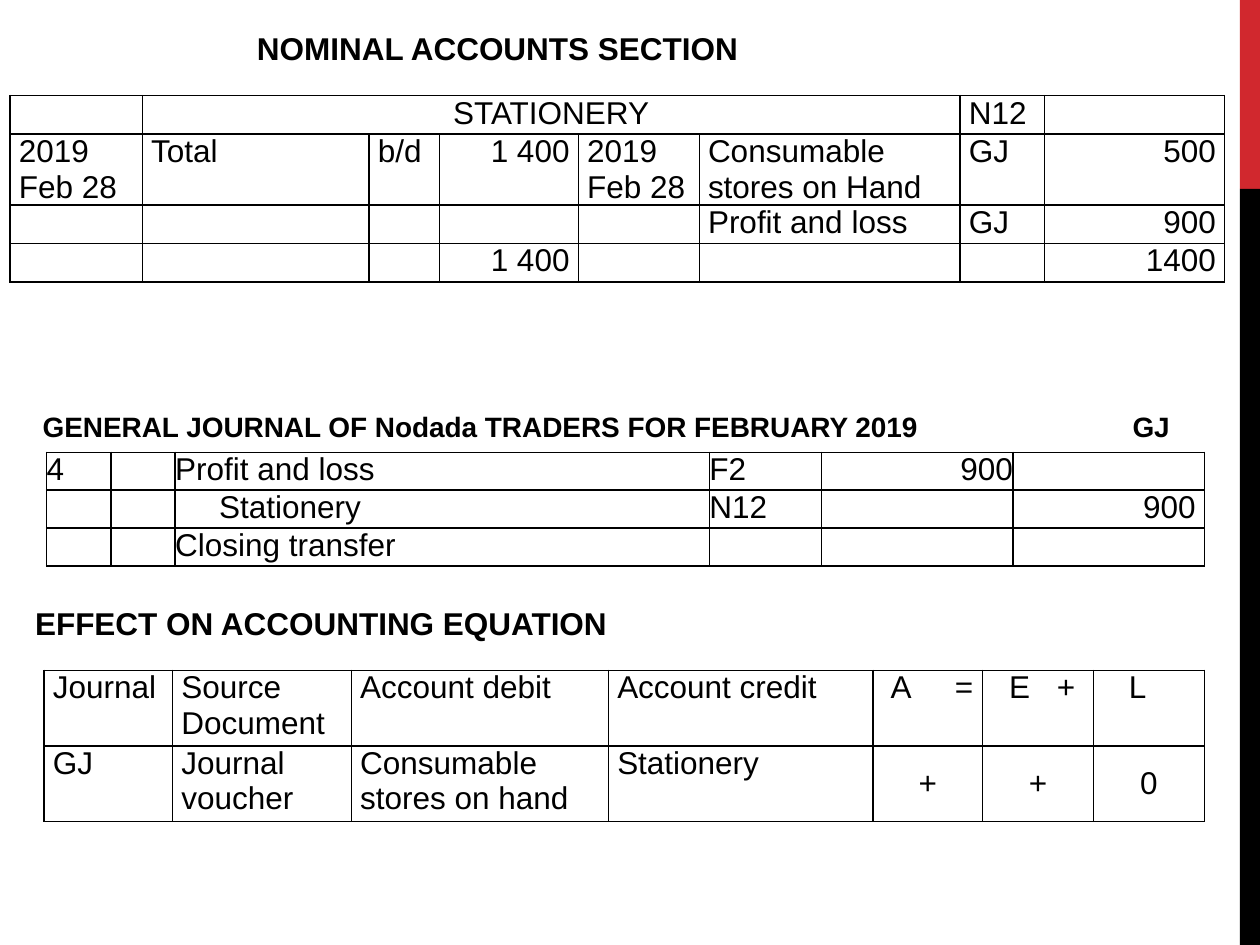
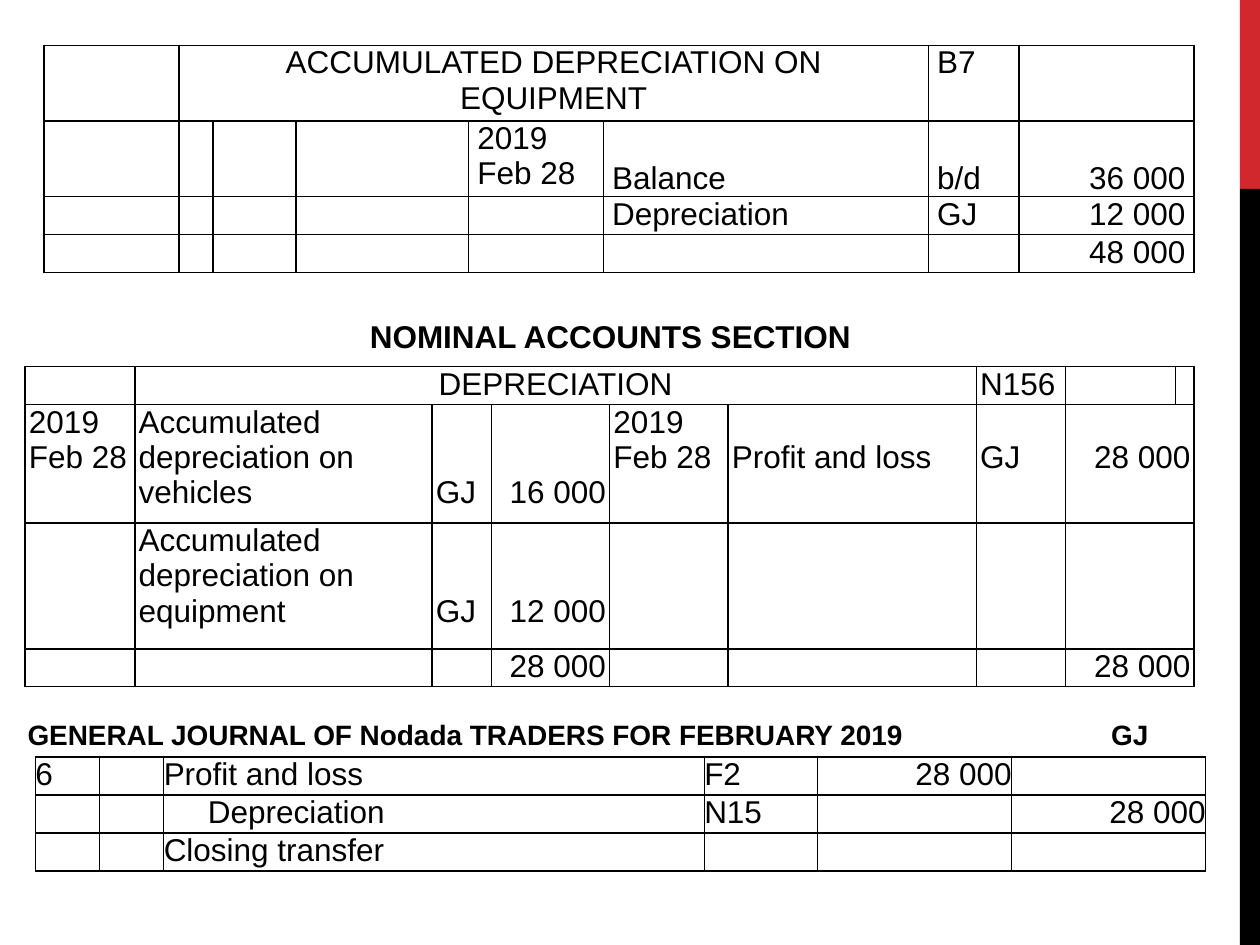
"""Build two slides of ledger accounts, journal entries and the accounting equation."""
from dataclasses import dataclass

from lxml import etree
from pptx import Presentation
from pptx import util as u
from pptx.dml.color import RGBColor
from pptx.enum import shapes, text
from pptx.oxml import ns

COLORS = {"ink": "000000", "accent": "D1282E", "paper": "FFFFFF"}
FONT = "Arial"
LINE = 0.28
ALIGN = {"l": text.PP_ALIGN.LEFT, "c": text.PP_ALIGN.CENTER, "r": text.PP_ALIGN.RIGHT}
ANCHOR = {"t": text.MSO_ANCHOR.TOP, "m": text.MSO_ANCHOR.MIDDLE, "b": text.MSO_ANCHOR.BOTTOM}


@dataclass(frozen=True)
class Bar:
    top: float
    height: float
    color: str


@dataclass(frozen=True)
class Heading:
    text: str
    left: float
    top: float
    width: float
    height: float = 0.4
    size: int = 18
    align: str = "l"
    tab: float | None = None
    right_inset: float = 0.1


@dataclass(frozen=True)
class Cell:
    text: str
    align: str | None = None
    anchor: str = "t"
    left: float | None = None
    right: float | None = None
    top: float = 0
    tab: float | None = None


@dataclass(frozen=True)
class Grid:
    left: float
    top: float
    cols: tuple[float, ...]
    heights: tuple[float, ...]
    rows: list[list[str | Cell]]
    inset: float = 0.07
    right_cols: tuple[int, ...] = ()
    spans: tuple[tuple[int, int, int], ...] = ()


BARS = (Bar(0, 1.5, "accent"), Bar(1.5, 6, "ink"))


def rgb(name: str) -> RGBColor:
    return RGBColor.from_string(COLORS[name])


def put_text(tf, content: str, *, size: int = 18, bold: bool = False,
             align: str = "l", tab: float | None = None) -> None:
    for i, line in enumerate(content.split("\n")):
        p = tf.paragraphs[0] if i == 0 else tf.add_paragraph()
        p.alignment = ALIGN[align]
        if tab is not None:
            tabs = etree.SubElement(p._p.get_or_add_pPr(), ns.qn("a:tabLst"))
            etree.SubElement(tabs, ns.qn("a:tab"), pos=str(u.Inches(tab)), algn="l")
        r = p.add_run()
        r.text = line
        r.font.name = FONT
        r.font.size = u.Pt(size)
        r.font.bold = bold
        r.font.color.rgb = rgb("ink")


def add_bar(s, bar: Bar) -> None:
    sp = s.shapes.add_shape(shapes.MSO_SHAPE.RECTANGLE, u.Inches(9.84), u.Inches(bar.top),
                            u.Inches(0.16), u.Inches(bar.height))
    sp.shadow.inherit = False
    sp.fill.solid()
    sp.fill.fore_color.rgb = rgb(bar.color)
    sp.line.fill.background()


def add_heading(s, h: Heading) -> None:
    sp = s.shapes.add_textbox(u.Inches(h.left), u.Inches(h.top),
                              u.Inches(h.width), u.Inches(h.height))
    tf = sp.text_frame
    tf.word_wrap = True
    tf.auto_size = text.MSO_AUTO_SIZE.SHAPE_TO_FIT_TEXT
    tf.vertical_anchor = ANCHOR["m"]
    tf.margin_right = u.Inches(h.right_inset)
    put_text(tf, h.text, size=h.size, bold=True, align=h.align, tab=h.tab)


def add_borders(cell) -> None:
    tc_pr = cell._tc.get_or_add_tcPr()
    for i, side in enumerate(("lnL", "lnR", "lnT", "lnB")):
        ln = etree.Element(ns.qn(f"a:{side}"), w=str(u.Pt(1)))
        fill = etree.SubElement(ln, ns.qn("a:solidFill"))
        etree.SubElement(fill, ns.qn("a:srgbClr"), val=COLORS["ink"])
        tc_pr.insert(i, ln)


def fill_cell(cell, item: Cell, inset: float, align: str) -> None:
    cell.margin_left = u.Inches(inset if item.left is None else item.left)
    cell.margin_right = u.Inches(inset if item.right is None else item.right)
    cell.margin_top = u.Inches(item.top)
    cell.margin_bottom = 0
    cell.vertical_anchor = ANCHOR[item.anchor]
    cell.fill.background()
    add_borders(cell)
    if item.text:
        put_text(cell.text_frame, item.text, align=item.align or align, tab=item.tab)


def add_grid(s, g: Grid) -> None:
    frame = s.shapes.add_table(len(g.heights), len(g.cols), u.Inches(g.left), u.Inches(g.top),
                               u.Inches(sum(g.cols)), u.Inches(sum(g.heights)))
    table = frame.table
    table.first_row = table.horz_banding = False
    for col, width in zip(table.columns, g.cols):
        col.width = u.Inches(width)
    for row, height in zip(table.rows, g.heights):
        row.height = u.Inches(height)
    for y, row in enumerate(g.rows):
        for x, value in enumerate(row):
            item = value if isinstance(value, Cell) else Cell(value)
            fill_cell(table.cell(y, x), item, g.inset, "r" if x in g.right_cols else "l")
    for y, first, last in g.spans:
        table.cell(y, first).merge(table.cell(y, last))


def account_title(name: str, folio: str, tail: int = 1) -> list[str | Cell]:
    return ["", Cell(name, align="c"), *[""] * 4, folio, *[""] * tail]


def journal(left: float, top: float, cols: tuple[float, ...], number: str, account: str,
            folio: str, amount: str, credit_inset: float = 0) -> Grid:
    rows = [
        [number, "", "Profit and loss", "F2", amount, ""],
        ["", "", Cell(account, left=0.35), folio, "", Cell(amount, right=credit_inset)],
        ["", "", "Closing transfer", "", "", ""],
    ]
    return Grid(left, top, cols, (0.3,) * 3, rows, inset=0, right_cols=(4, 5))


def journal_heading(left: float, top: float, width: float, tab: float) -> Heading:
    return Heading("GENERAL JOURNAL OF Nodada TRADERS FOR FEBRUARY 2019\tGJ",
                   left, top, width, height=0.37, size=16, tab=tab)


def depreciation_row(date: str, asset: str, amount: str, date_credit: str, account: str,
                     folio: str, credit: str) -> list[str | Cell]:
    third, second = 2 * LINE, LINE
    return [date, f"Accumulated depreciation on {asset}", Cell("GJ", top=third),
            Cell(amount, top=third), date_credit, Cell(account, top=second),
            Cell(folio, top=second), Cell(credit, top=second), ""]


def nominal_heading(left: float, top: float, width: float, right_inset: float = 0.1) -> Heading:
    return Heading("NOMINAL ACCOUNTS SECTION", left, top, width,
                   align="c", right_inset=right_inset)


STATIONERY = Grid(
    0.08, 0.76, (1.05, 1.8, 0.56, 1.1, 0.96, 2.07, 0.67, 1.43), (LINE, 2 * LINE, LINE, LINE),
    [
        account_title("STATIONERY", "N12"),
        ["2019\nFeb 28", "Total", "b/d", "1 400", "2019\nFeb 28",
         "Consumable stores on Hand", "GJ", "500"],
        ["", "", "", "", "", "Profit and loss", "GJ", "900"],
        ["", "", "", "1 400", "", "", "", "1400"],
    ],
    right_cols=(3, 7), spans=((0, 1, 5),))

EQUATION = Grid(
    0.35, 5.32, (1.02, 1.42, 2.04, 2.1, 0.87, 0.88, 0.88), (0.6, 0.6),
    [
        ["Journal", "Source Document", "Account debit", "Account credit",
         Cell("A\t=", left=0.14, right=0, tab=0.51),
         Cell("E\t+", left=0.21, right=0, tab=0.38), Cell("L", left=0.28)],
        ["GJ", "Journal voucher", "Consumable stores on hand", "Stationery",
         *[Cell(sign, align="c", anchor="m") for sign in "++0"]],
    ])

ACCUMULATED = Grid(
    0.35, 0.36, (1.07, 0.27, 0.66, 1.37, 1.07, 2.58, 0.72, 1.39),
    (2 * LINE, 2 * LINE, LINE, LINE),
    [
        account_title("ACCUMULATED DEPRECIATION ON EQUIPMENT", "B7"),
        ["", "", "", "", "2019 Feb 28",
         *[Cell(entry, anchor="b") for entry in ("Balance", "b/d", "36 000")]],
        ["", "", "", "", "", "Depreciation", "GJ", "12 000"],
        ["", "", "", "", "", "", "", "48 000"],
    ],
    right_cols=(7,), spans=((0, 1, 5),))

DEPRECIATION = Grid(
    0.2, 2.91, (0.87, 2.36, 0.47, 0.94, 0.94, 1.97, 0.71, 0.87, 0.15), (LINE, 0.94, 1, LINE),
    [
        account_title("DEPRECIATION", "N156", tail=2),
        depreciation_row("2019 Feb 28", "vehicles", "16 000", "2019 Feb 28",
                         "Profit and loss", "GJ", "28 000"),
        depreciation_row("", "equipment", "12 000", "", "", "", ""),
        ["", "", "", "28 000", "", "", "", "28 000", ""],
    ],
    inset=0.03, right_cols=(3, 7), spans=((0, 1, 5), (1, 7, 8), (2, 7, 8), (3, 7, 8)))

SLIDES = (
    (
        STATIONERY,
        nominal_heading(0.2, 0.18, 9.53, right_inset=2.13),
        journal(0.37, 3.59, (0.51, 0.51, 4.24, 0.89, 1.52, 1.52),
                "4", "Stationery", "N12", "900", credit_inset=0.07),
        journal_heading(0.24, 3.2, 9.45, tab=8.65),
        EQUATION,
        Heading("EFFECT ON ACCOUNTING EQUATION", 0.18, 4.74, 9.39),
    ),
    (
        ACCUMULATED,
        DEPRECIATION,
        nominal_heading(0.28, 2.47, 9.13),
        journal_heading(0.12, 5.64, 9.29, tab=8.6),
        journal(0.28, 6.01, (0.51, 0.51, 4.29, 0.9, 1.54, 1.54),
                "6", "Depreciation", "N15", "28 000"),
    ),
)


def main() -> None:
    prs = Presentation()
    prs.slide_width, prs.slide_height = u.Inches(10), u.Inches(7.5)
    for items in SLIDES:
        s = prs.slides.add_slide(prs.slide_layouts[6])
        s.background.fill.solid()
        s.background.fill.fore_color.rgb = rgb("paper")
        for bar in BARS:
            add_bar(s, bar)
        for item in items:
            if isinstance(item, Grid):
                add_grid(s, item)
            else:
                add_heading(s, item)
    prs.save("out.pptx")


if __name__ == "__main__":
    main()
